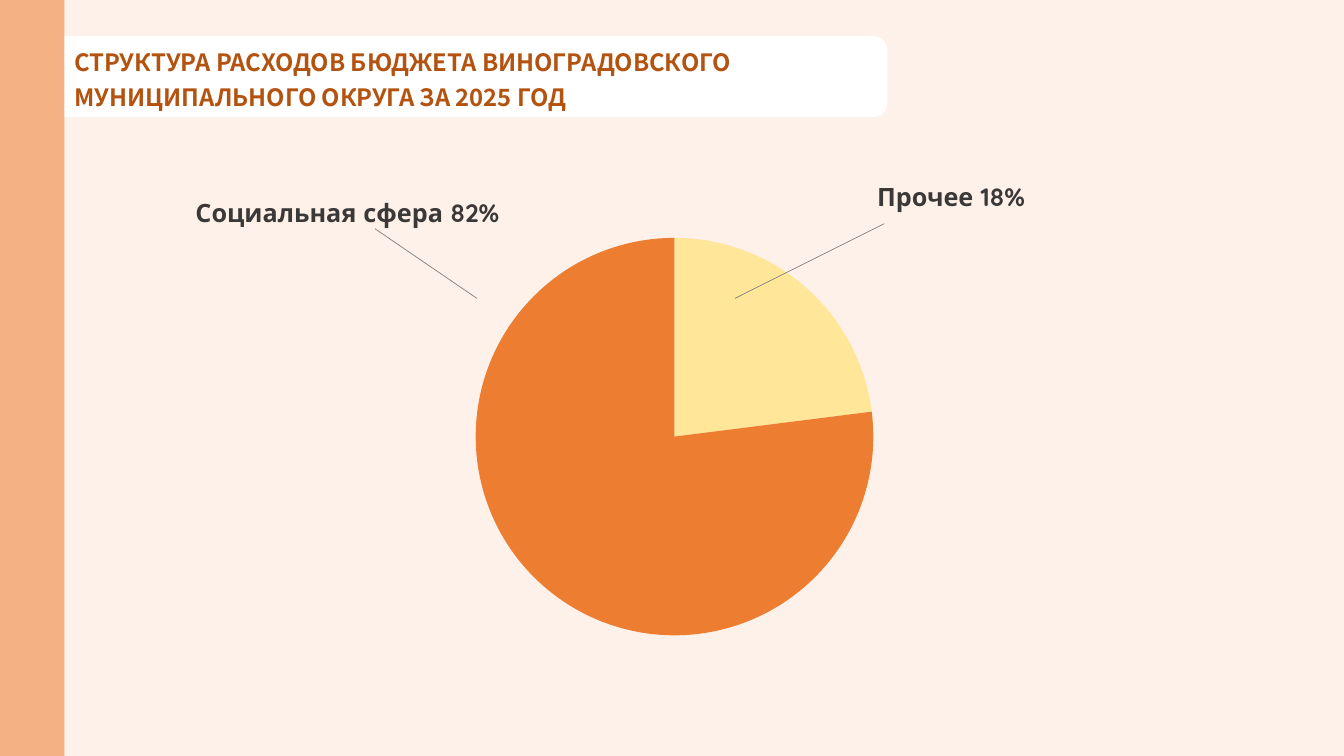
from lxml import etree
from pptx import Presentation
from pptx.chart.data import CategoryChartData
from pptx.dml.color import RGBColor
from pptx.enum.chart import XL_CHART_TYPE
from pptx.enum.shapes import MSO_CONNECTOR, MSO_SHAPE
from pptx.enum.text import MSO_ANCHOR, PP_ALIGN
from pptx.oxml import parse_xml
from pptx.oxml.ns import qn
from pptx.util import Inches, Pt

PIE = XL_CHART_TYPE.PIE
STRAIGHT = MSO_CONNECTOR.STRAIGHT
RECTANGLE = MSO_SHAPE.RECTANGLE
ROUNDED = MSO_SHAPE.ROUNDED_RECTANGLE
MIDDLE = MSO_ANCHOR.MIDDLE
LEFT = PP_ALIGN.LEFT

TITLE = "СТРУКТУРА РАСХОДОВ БЮДЖЕТА ВИНОГРАДОВСКОГО МУНИЦИПАЛЬНОГО ОКРУГА ЗА 2025 ГОД"
TITLE_FONT = {"name": "Noto Sans CJK JP", "size": Pt(17), "bold": True}
LABEL_FONT = {"name": "Quicksand", "size": Pt(18), "bold": True}
CHART_FONT = {"name": "Calibri", "size": Pt(10)}
SHARES = {"1": (23, "FFE699"), "2": (77, "ED7D31")}
PLOT_LAYOUT = {
    "layoutTarget": "inner", "xMode": "edge", "yMode": "edge",
    "x": 0.045, "y": 0, "w": 0.953, "h": 0.928,
}
CALLOUTS = [
    ("Прочее 18%", (8.6, 1.75, 2.68, 0.4), (0.17, 0.47), (-1.31, 1.21)),
    ("Социальная сфера 82%", (1.84, 1.91, 3.58, 0.4), (1.88, 0.36), (2.89, 1.05)),
]


def color(value):
    return RGBColor.from_string(value)


def format_font(font, values, tint):
    for key, value in values.items():
        setattr(font, key, value)
    font.color.rgb = color(tint)


def add_block(slide, kind, box, fill):
    block = slide.shapes.add_shape(kind, *map(Inches, box))
    block.shadow.inherit = False
    block.fill.solid()
    block.fill.fore_color.rgb = color(fill)
    block.line.fill.background()
    return block


def add_title(slide, box):
    left, top, width, height = box
    add_block(slide, ROUNDED, (left + 0.37, top, width + 0.02, height), "FFFFFF")
    banner = add_block(slide, RECTANGLE, box, "FFFFFF")
    frame = banner.text_frame
    frame.word_wrap = True
    frame.vertical_anchor = MIDDLE
    heading = frame.paragraphs[0]
    heading.text = TITLE
    heading.alignment = LEFT
    heading.line_spacing = Pt(25)
    format_font(heading.font, TITLE_FONT, "B45210")


def add_spending_pie(slide, box):
    data = CategoryChartData()
    data.categories = list(SHARES)
    data.add_series("Series 1", [share for share, _ in SHARES.values()])
    chart = slide.shapes.add_chart(PIE, *map(Inches, box), data).chart
    chart.has_legend = False
    chart.has_title = False
    format_font(chart.font, CHART_FONT, "000000")
    plot = chart.plots[0]
    plot.vary_by_categories = True
    for index, (_, tint) in enumerate(SHARES.values()):
        sector = plot.series[0].points[index].format
        sector.fill.solid()
        sector.fill.fore_color.rgb = color(tint)
        sector.line.fill.background()
    area = chart.element.find(".//" + qn("c:plotArea"))
    for automatic in area.findall(qn("c:layout")):
        area.remove(automatic)
    layout = parse_xml(
        '<c:layout xmlns:c="http://schemas.openxmlformats.org/drawingml/2006/chart">'
        "<c:manualLayout/></c:layout>"
    )
    for key, value in PLOT_LAYOUT.items():
        etree.SubElement(layout[0], qn("c:" + key)).set("val", str(value))
    area.insert(0, layout)


def add_callout(slide, box, text, start, end):
    label = slide.shapes.add_textbox(*map(Inches, box))
    label.text_frame.word_wrap = True
    caption = label.text_frame.paragraphs[0]
    caption.text = text
    format_font(caption.font, LABEL_FONT, "3B3838")
    left, top = box[:2]
    ends = [Inches(edge + shift) for point in (start, end)
            for edge, shift in zip((left, top), point)]
    leader = slide.shapes.add_connector(STRAIGHT, *ends)
    leader.line.color.rgb = color("808080")
    leader.line.width = Pt(0.5)
    etree.SubElement(leader._element.spPr, qn("a:effectLst"))


def build_slide(deck):
    slide = deck.slides.add_slide(deck.slide_layouts[6])
    backdrop = slide.background.fill
    backdrop.solid()
    backdrop.fore_color.rgb = color("FEF1E9")
    add_block(slide, RECTANGLE, (0, 0, 0.64, 7.5), "F4B183")
    add_title(slide, (0.64, 0.36, 7.77, 0.8))
    add_spending_pie(slide, (3.28, 2.36, 6.54, 4.25))
    for text, box, start, end in CALLOUTS:
        add_callout(slide, box, text, start, end)


def main():
    deck = Presentation()
    deck.slide_width = Inches(13.33)
    deck.slide_height = Inches(7.5)
    build_slide(deck)
    deck.save("out.pptx")


if __name__ == "__main__":
    main()
